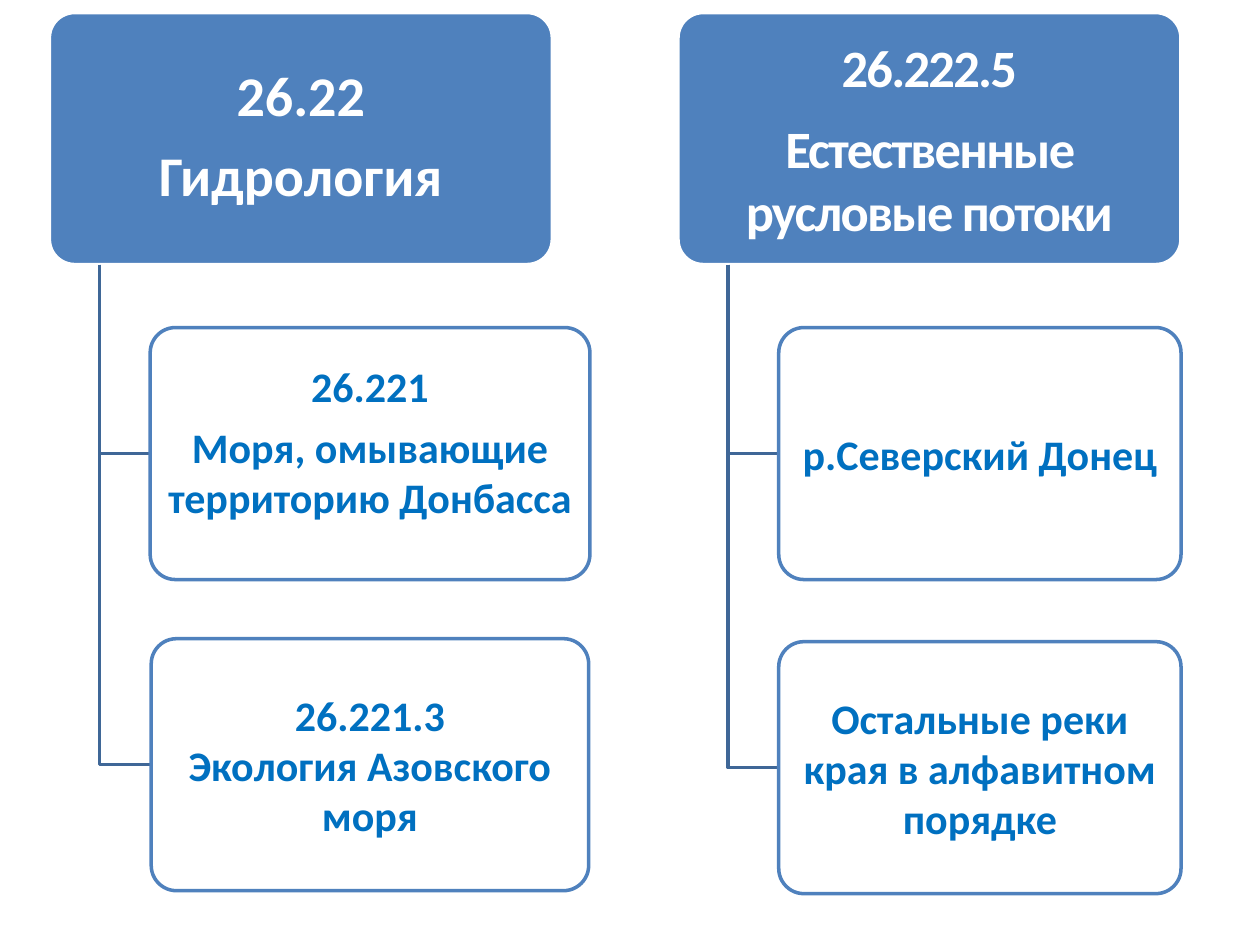
from lxml.etree import SubElement
from pptx import Presentation
from pptx.dml.color import RGBColor
from pptx.enum.shapes import MSO_SHAPE
from pptx.enum.text import MSO_ANCHOR, PP_ALIGN
from pptx.oxml.ns import qn
from pptx.util import Pt

WHITE = RGBColor(0xFF, 0xFF, 0xFF)
BLUE = RGBColor(0x4F, 0x81, 0xBD)
STEM_BLUE = RGBColor(0x3F, 0x67, 0x97)
TEXT_BLUE = RGBColor(0x00, 0x70, 0xC0)

BOX_HEIGHT = 144
HEAD_TOP = 7.2
HEAD_WIDTH = 287.4
CHILD_INDENT = 57.6
STEM_INDENT = HEAD_WIDTH / 10


class Hierarchy:
    def __init__(self, page, font="Calibri"):
        self.page = page
        self.font = font

    def rounded_box(self, left, top, width, fill, line):
        box = self.page.shapes.add_shape(
            MSO_SHAPE.ROUNDED_RECTANGLE, Pt(left), Pt(top), Pt(width), Pt(BOX_HEIGHT))
        box.adjustments[0] = 0.1
        box.shadow.inherit = False
        box.fill.solid()
        box.fill.fore_color.rgb = fill
        box.line.color.rgb = line
        box.line.width = Pt(2)
        return box

    def label(self, box, lines, size, color, gap=0, inset=3.6, line_spacing=None, tracking=0):
        """Fill the box with bold centred paragraphs, gap points apart."""
        frame = box.text_frame
        frame.word_wrap = True
        frame.vertical_anchor = MSO_ANCHOR.MIDDLE
        frame.margin_left = frame.margin_right = Pt(inset)
        frame.margin_top = frame.margin_bottom = Pt(inset * 0.6)
        for index, text in enumerate(lines):
            para = frame.paragraphs[0] if index == 0 else frame.add_paragraph()
            span = para.add_run()
            span.text = text
            if tracking:
                span.font._element.set("spc", str(round(tracking * 100)))
            para.alignment = PP_ALIGN.CENTER
            para.line_spacing = line_spacing
            para.space_after = Pt(gap if index < len(lines) - 1 else 0)
            para.font.name = self.font
            para.font.size = Pt(size)
            para.font.bold = True
            para.font.color.rgb = color

    def head(self, left, lines, size, **style):
        box = self.rounded_box(left, HEAD_TOP, HEAD_WIDTH, BLUE, WHITE)
        self.label(box, lines, size, WHITE, gap=size * 0.35, **style)

    def child(self, left, top, width, lines, gap=0):
        box = self.rounded_box(left, top, width, WHITE, BLUE)
        fill_color = box._element.spPr.find(qn("a:solidFill"))[0]
        SubElement(fill_color, qn("a:alpha")).set("val", "90000")
        self.label(box, lines, 24, TEXT_BLUE, gap=gap)
        return box

    def elbow(self, head_left, child_left, child_top):
        """Run from the bottom of a head down and across to a child's left side."""
        stem = head_left + STEM_INDENT
        middle = child_top + BOX_HEIGHT / 2
        builder = self.page.shapes.build_freeform(Pt(stem), Pt(HEAD_TOP + BOX_HEIGHT))
        builder.add_line_segments(
            [(Pt(stem), Pt(middle)), (Pt(child_left), Pt(middle))], close=False)
        line = builder.convert_to_shape()
        line.shadow.inherit = False
        line.fill.background()
        line.line.color.rgb = STEM_BLUE
        line.line.width = Pt(2)


def main():
    deck = Presentation()
    deck.slide_width, deck.slide_height = Pt(720), Pt(540)
    chart = Hierarchy(deck.slides.add_slide(deck.slide_layouts[6]))

    hydrology, rivers = 28.2, 387.4
    chart.head(hydrology, ["26.22", "Гидрология"], 32, inset=4.8, line_spacing=0.9)
    chart.head(rivers, ["26.222.5", "Естественные русловые потоки"], 30,
               inset=4.5, tracking=-1)

    children = [
        (hydrology, 0, 187.2, 251.3, ["26.221", "Моря, омывающие территорию Донбасса"], 6),
        (hydrology, 0.6, 365, 250, ["26.221.3", "Экология Азовского моря"], 0),
        (rivers, 0, 187.2, 229.9, ["р.Северский Донец"], 0),
        (rivers, 0, 366.7, 229.9, ["Остальные реки края в алфавитном порядке"], 0),
    ]
    for head_left, shift, top, width, lines, gap in children:
        left = head_left + CHILD_INDENT + shift
        chart.elbow(head_left, left, top)
        box = chart.child(left, top, width, lines, gap)
        if gap:
            box.text_frame.paragraphs[0].line_spacing = Pt(15)

    deck.save("out.pptx")


if __name__ == "__main__":
    main()
